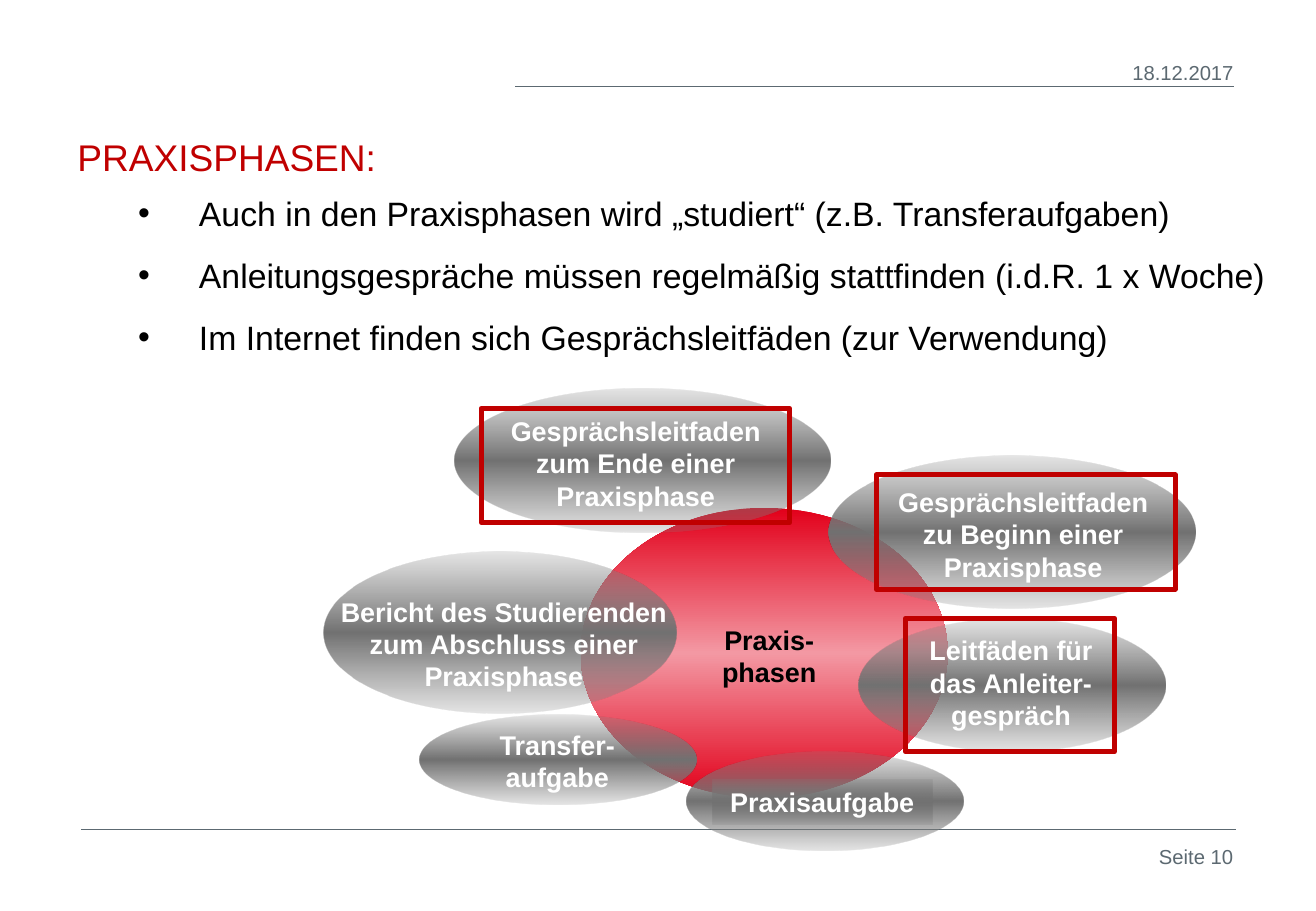
from dataclasses import dataclass
from typing import NamedTuple

from lxml.etree import SubElement
from pptx import Presentation
from pptx.dml.color import RGBColor as RGB
from pptx.enum.shapes import MSO_CONNECTOR as LINE, MSO_SHAPE as SHAPE
from pptx.enum.text import PP_ALIGN as ALIGN
from pptx.oxml.ns import qn
from pptx.util import Cm, Pt


@dataclass(frozen=True)
class Theme:
    font: str = "Arial"
    accent: str = "C00000"
    muted: str = "5C6971"
    black: str = "000000"
    white: str = "FFFFFF"
    # Gradient stops: position, colour, opacity (all percentages)
    red: tuple = ((0, "E2001A", 100), (50, "F398A3", 100), (100, "E2001A", 100))
    grey: tuple = ((0, "808080", 20), (50, "727272", 100), (100, "808080", 20))
    title: float = 22
    body: float = 20
    label: float = 16
    small: float = 12


class Box(NamedTuple):
    """Left, top, width and height in centimetres."""
    x: float
    y: float
    w: float
    h: float

    def place(self, x, y, w, h):
        return Box(round(self.x + x, 2), round(self.y + y, 2), w, h)

    def emu(self):
        return [Cm(v) for v in self]


class Topic(NamedTuple):
    text: str
    ellipse: tuple
    caption: tuple
    frame: tuple = None
    banded: bool = False


THEME = Theme()
BULLETS = (
    "Auch in den Praxisphasen wird „studiert“ (z.B. Transferaufgaben)",
    "Anleitungsgespräche müssen regelmäßig stattfinden (i.d.R. 1 x Woche)",
    "Im Internet finden sich Gesprächsleitfäden (zur Verwendung)",
)
# Positions are offsets from the corner of the diagram
TOPICS = (
    Topic("Gesprächsleitfaden zu Beginn einer Praxisphase",
          (10.57, 1.4, 7.67, 3.2), (11.43, 1.9, 6.4, 2.29), (11.56, 1.8, 6.25, 2.39)),
    Topic("Bericht des Studierenden zum Abschluss einer Praxisphase",
          (0, 3.4, 7.39, 3.4), (0.08, 4.19, 7.39, 2.29)),
    Topic("Transfer-aufgabe", (2.01, 6.81, 5.79, 1.88), (2.59, 6.98, 4.6, 1.63)),
    Topic("Praxisaufgabe", (7.59, 7.59, 5.79, 2.06), (8.13, 8.18, 4.6, 0.94), banded=True),
    Topic("Leitfäden für das Anleiter-gespräch",
          (11.2, 4.8, 6.4, 2.79), (12.24, 5, 4.27, 2.29), (12.17, 4.8, 4.37, 2.79)),
    Topic("Gesprächsleitfaden zum Ende einer Praxisphase",
          (2.74, 0, 7.87, 3), (3.33, 0.41, 6.4, 2.29), (3.3, 0.41, 6.45, 2.39)),
)


def style(p, size, color, bold=False):
    for r in p.runs:
        r.font.name, r.font.size, r.font.bold = THEME.font, Pt(size), bold
        r.font.color.rgb = RGB.from_string(color)


def add_text(s, box, text, size, color, align, bold=False):
    tf = s.shapes.add_textbox(*box.emu()).text_frame
    tf.word_wrap = True
    p = tf.paragraphs[0]
    p.text, p.alignment = text, align
    style(p, size, color, bold)


def add_rule(s, x1, x2, y):
    line = s.shapes.add_connector(LINE.STRAIGHT, Cm(x1), Cm(y), Cm(x2), Cm(y))
    line.line.color.rgb = RGB.from_string(THEME.muted)
    line.line.width = Pt(0.25)
    SubElement(line._element.spPr, qn("a:effectLst"))


def add_gradient(s, kind, box, stops):
    sp = s.shapes.add_shape(kind, *box.emu())
    sp.shadow.inherit = False
    sp.line.fill.background()
    sp.fill.gradient()
    sp.fill.gradient_angle = 270
    stop_list = sp._element.spPr.find(qn("a:gradFill")).find(qn("a:gsLst"))
    for old in list(stop_list):
        stop_list.remove(old)
    for position, color, opacity in stops:
        gs = SubElement(stop_list, qn("a:gs"), pos=str(position * 1000))
        clr = SubElement(gs, qn("a:srgbClr"), val=color)
        if opacity < 100:
            SubElement(clr, qn("a:alpha"), val=str(opacity * 1000))


def add_frame(s, box):
    sp = s.shapes.add_shape(SHAPE.RECTANGLE, *box.emu())
    sp.shadow.inherit = False
    sp.fill.background()
    sp.line.color.rgb = RGB.from_string(THEME.accent)
    sp.line.width = Pt(3)


def add_header(s, box):
    add_rule(s, box.x, box.x + box.w - 0.25, box.y + 0.66)
    date = box.place(box.w - 5.49, 0, 5.49, 0.79)
    add_text(s, date, "18.12.2017", THEME.small, THEME.muted, ALIGN.RIGHT)


def add_footer(s, box):
    add_rule(s, box.x, box.x + box.w - 0.2, box.y)
    page = box.place(box.w - 2.54, 0.18, 2.54, 1.27)
    add_text(s, page, "Seite 10", THEME.small, THEME.muted, ALIGN.RIGHT)


def add_body(s, box):
    tf = s.shapes.add_textbox(*box.emu()).text_frame
    tf.word_wrap = True
    tf.margin_top = Cm(0.3)
    p = tf.paragraphs[0]
    p.text, p.space_after = "PRAXISPHASEN:", Pt(1.6)
    style(p, THEME.title, THEME.accent)
    for text in BULLETS:
        p = tf.add_paragraph()
        p.text = text
        p.space_before = p.space_after = Pt(6.4)
        pPr = p._p.get_or_add_pPr()
        pPr.set("marL", str(Cm(2.54)))
        pPr.set("indent", str(-Cm(1.27)))
        SubElement(pPr, qn("a:buFont"), typeface=THEME.font)
        SubElement(pPr, qn("a:buChar"), char="•")
        style(p, THEME.body, THEME.black)


def add_diagram(s, box):
    # Centre
    add_gradient(s, SHAPE.OVAL, box.place(5.38, 2.49, 7.67, 6.07), THEME.red)
    add_text(s, box.place(7.44, 4.78, 3.76, 1.63), "Praxis-phasen",
             THEME.label, THEME.black, ALIGN.CENTER, True)
    # Topics around it
    for topic in TOPICS:
        caption = box.place(*topic.caption)
        add_gradient(s, SHAPE.OVAL, box.place(*topic.ellipse), THEME.grey)
        if topic.banded:
            add_gradient(s, SHAPE.RECTANGLE, caption, THEME.grey)
        add_text(s, caption, topic.text, THEME.label, THEME.white, ALIGN.CENTER, True)
    # Highlighted guides
    for topic in TOPICS:
        if topic.frame:
            add_frame(s, box.place(*topic.frame))


def main():
    prs = Presentation()
    prs.slide_width, prs.slide_height = Cm(27.51), Cm(19.05)
    s = prs.slides.add_slide(prs.slide_layouts[6])
    add_header(s, Box(10.77, 1.14, 15.27, 0.79))
    add_footer(s, Box(1.7, 17.35, 14.33 + 10, 1.45))
    add_body(s, Box(1.37, 2.51, 26.14, 6.17))
    add_diagram(s, Box(6.76, 8.13, 18.24, 9.65))
    prs.save("out.pptx")


if __name__ == "__main__":
    main()
